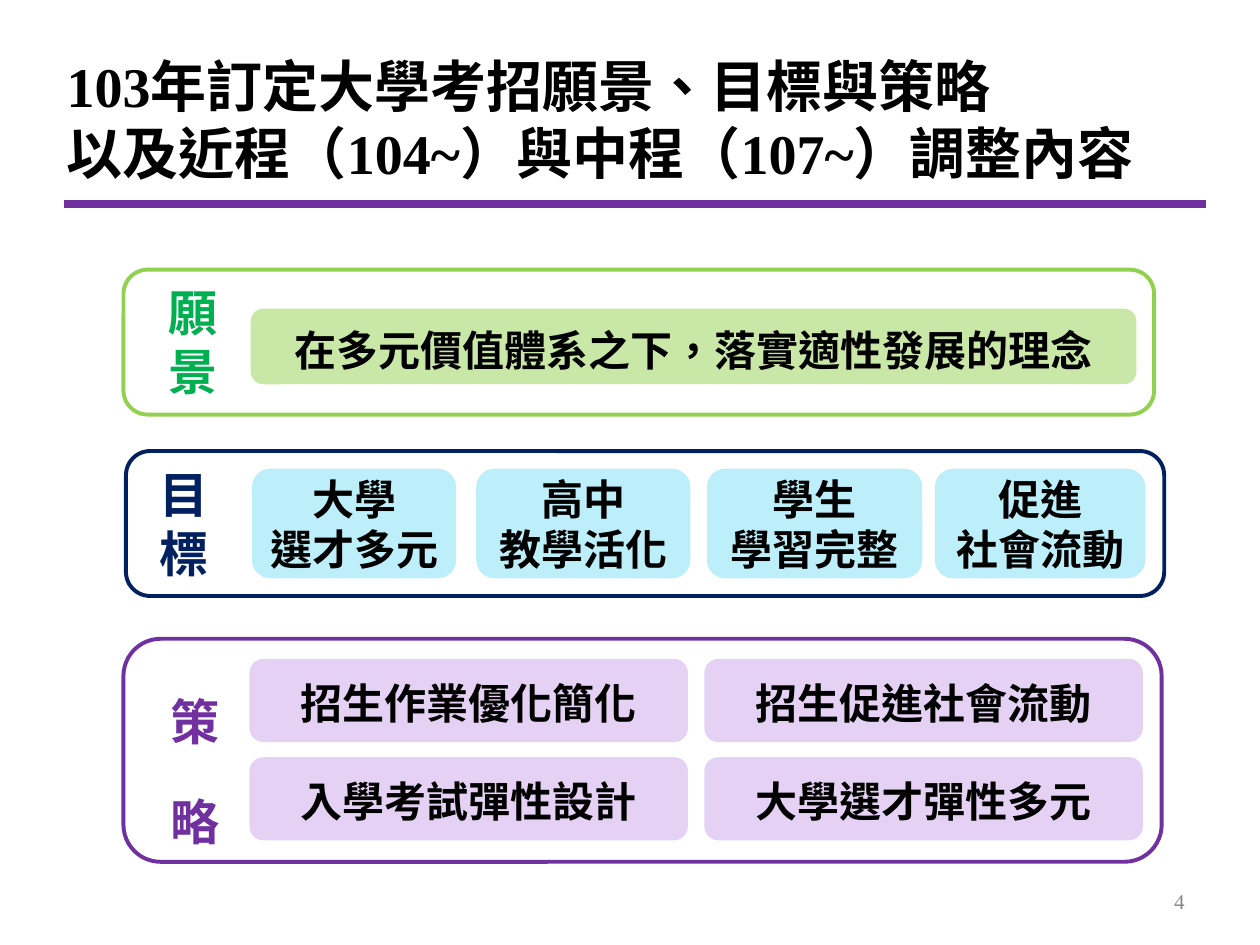
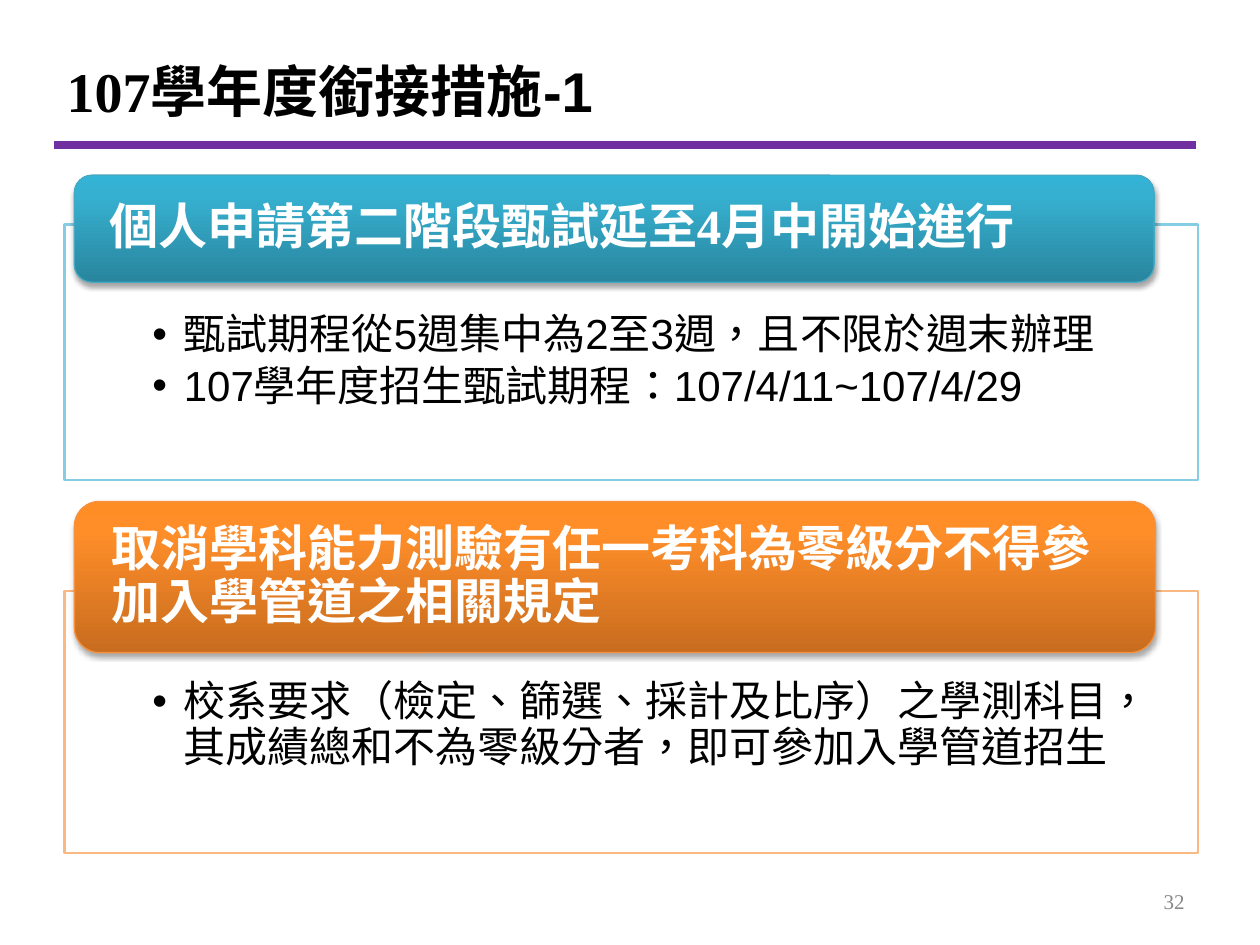
from itertools import product

from lxml.etree import SubElement
from pptx import Presentation
from pptx.dml.color import RGBColor
from pptx.enum.lang import MSO_LANGUAGE_ID
from pptx.enum.shapes import MSO_CONNECTOR, MSO_SHAPE
from pptx.enum.text import MSO_ANCHOR, PP_ALIGN
from pptx.oxml.ns import qn
from pptx.util import Inches, Pt

COLOURS = {
    "ink": "000000", "white": "FFFFFF", "purple": "7030A0", "grey": "888888",
    "vision line": "92D050", "vision label": "00B050", "vision tile": "C9E7A7",
    "goal": "002060", "goal tile": "BDEFFB", "strategy tile": "E4D1F3",
    "blue line": "86CCE2", "blue edge": "45A9C4",
    "orange line": "FAB882", "orange edge": "F5913F",
}
# Banner gradients run from the bottom edge upwards: (percent, colour)
GRADIENTS = {
    "blue": [(0, "29859E"), (80, "36B0D0"), (100, "33B3D5")],
    "orange": [(0, "C86C1F"), (80, "FF8E29"), (100, "FF8D25")],
}
SANS, SERIF = "Arial", "Times New Roman"
INSETS = (0.1, 0.05, 0.1, 0.05)


def colour(name):
    return RGBColor.from_string(COLOURS[name])


def add_bullet(para):
    properties = para._p.get_or_add_pPr()
    properties.set("marL", str(Inches(0.25)))
    properties.set("indent", str(-Inches(0.25)))
    SubElement(properties, qn("a:buFont"), typeface=SANS)
    SubElement(properties, qn("a:buChar"), char="•")


def write(box, paragraphs, size, ink="ink", font=SANS, bold=True,
          align=PP_ALIGN.LEFT, anchor=MSO_ANCHOR.MIDDLE, spacing=1.0,
          indent=0, bullets=False, insets=INSETS):
    """Each paragraph is a string or a list of (text, font) spans."""
    frame = box.text_frame
    frame.word_wrap = True
    frame.vertical_anchor = anchor
    for side, inset in zip(("left", "top", "right", "bottom"), insets):
        setattr(frame, f"margin_{side}", Inches(inset))
    for number, spans in enumerate(paragraphs):
        para = frame.add_paragraph() if number else frame.paragraphs[0]
        para.alignment = align
        para.line_spacing = spacing
        if number:
            para.space_before = Pt(3.6)
        if bullets:
            add_bullet(para)
        elif indent:
            para._p.get_or_add_pPr().set("marL", str(Inches(indent)))
        if isinstance(spans, str):
            spans = [(spans, font)]
        for text, face in spans:
            for row, line in enumerate(text.split("\n")):
                if row:
                    para.add_line_break()
                span = para.add_run()
                span.text = line
                look = {"name": face, "size": Pt(size), "bold": bold,
                        "language_id": MSO_LANGUAGE_ID.TRADITIONAL_CHINESE}
                for key, value in look.items():
                    setattr(span.font, key, value)
                span.font.color.rgb = colour(ink)


def add_box(page, kind, place, fill=None, line=None, weight=2.25):
    box = page.shapes.add_shape(kind, *map(Inches, place))
    box.shadow.inherit = False
    if fill:
        box.fill.solid()
        box.fill.fore_color.rgb = colour(fill)
    else:
        box.fill.background()
    if line:
        box.line.color.rgb = colour(line)
        box.line.width = Pt(weight)
    else:
        box.line.fill.background()
    return box


def add_text(page, place, paragraphs, size, **style):
    box = page.shapes.add_textbox(*map(Inches, place))
    write(box, paragraphs, size, **style)


def add_rule(page, left, top):
    rule = page.shapes.add_connector(
        MSO_CONNECTOR.STRAIGHT, Inches(left), Inches(top),
        Inches(left + 9.06), Inches(top))
    rule.line.color.rgb = colour("purple")
    rule.line.width = Pt(4.5)
    SubElement(rule._element.spPr, qn("a:effectLst"))


def add_page(deck, number, title, title_place, rule_at, anchor):
    page = deck.slides.add_slide(deck.slide_layouts[6])
    add_rule(page, *rule_at)
    add_text(page, title_place, [title], 32, font=SERIF, anchor=anchor)
    add_text(page, (7.17, 6.95, 2.33, 0.4), [number], 12, ink="grey",
             font=SERIF, bold=False, align=PP_ALIGN.RIGHT)
    return page


def add_frame(page, place, line, label, ink, **style):
    """Outlined band whose label stands at its left end."""
    frame = add_box(page, MSO_SHAPE.ROUNDED_RECTANGLE, place, line=line)
    write(frame, [label], 28, ink=ink, **style)


def add_tile(page, place, fill, text, **style):
    tile = add_box(page, MSO_SHAPE.ROUNDED_RECTANGLE, place, fill=fill)
    write(tile, [text], 24, align=PP_ALIGN.CENTER, **style)


def paint_gradient(box, stops):
    properties = box._element.spPr
    properties.remove(properties.find(qn("a:noFill")))
    gradient = properties.makeelement(qn("a:gradFill"), {"rotWithShape": "1"})
    properties.find(qn("a:prstGeom")).addnext(gradient)
    stop_list = SubElement(gradient, qn("a:gsLst"))
    for percent, value in stops:
        stop = SubElement(stop_list, qn("a:gs"), pos=str(percent * 1000))
        SubElement(stop, qn("a:srgbClr"), val=value)
    SubElement(gradient, qn("a:lin"), ang=str(270 * 60000), scaled="0")


def drop_shadow(box):
    effects = box._element.spPr.find(qn("a:effectLst"))
    shadow = SubElement(effects, qn("a:outerShdw"), blurRad=str(Pt(3.1)),
                        dist=str(Pt(1.8)), dir=str(90 * 60000), rotWithShape="0")
    shade = SubElement(shadow, qn("a:srgbClr"), val=COLOURS["ink"])
    SubElement(shade, qn("a:alpha"), val="35000")


def add_measure(page, hue, panel_top, panel_height, banner_place, heading, points):
    """Panel of bullet points with a shaded banner over its top edge."""
    panel = add_box(page, MSO_SHAPE.RECTANGLE, (0.51, panel_top, 9, panel_height),
                    fill="white", line=f"{hue} line", weight=1.5)
    write(panel, points, 24, bold=False, anchor=MSO_ANCHOR.TOP, spacing=0.9,
          bullets=True, insets=(0.7, 0.71, 0.7, 0.19))
    banner = add_box(page, MSO_SHAPE.ROUNDED_RECTANGLE, banner_place,
                     line=f"{hue} edge", weight=0.75)
    paint_gradient(banner, GRADIENTS[hue])
    drop_shadow(banner)
    write(banner, [heading], 28, ink="white", spacing=0.9,
          insets=(0.24, 0, 0.24, 0))


def build_vision_page(deck):
    page = add_page(
        deck, "4",
        "103年訂定大學考招願景、目標與策略\n以及近程（104~）與中程（107~）調整內容",
        (0.43, 0.36, 9.57, 1.18), (0.51, 1.62), MSO_ANCHOR.TOP)

    add_frame(page, (0.98, 2.14, 8.18, 1.15), "vision line", "願\n景",
              "vision label", anchor=MSO_ANCHOR.TOP, indent=0.2)
    add_tile(page, (1.99, 2.45, 7.03, 0.6), "vision tile",
             "在多元價值體系之下，落實適性發展的理念", font=SERIF, spacing=1.12)

    add_frame(page, (1, 3.58, 8.24, 1.15), "goal", "目\n標", "goal",
              anchor=MSO_ANCHOR.TOP, indent=0.11)
    goals = [(2, 1.62, "大學\n選才多元"), (3.78, 1.7, "高中\n教學活化"),
             (5.61, 1.71, "學生\n學習完整"), (7.42, 1.67, "促進\n社會流動")]
    for left, width, goal in goals:
        add_tile(page, (left, 3.72, width, 0.87), "goal tile", goal)

    add_frame(page, (0.98, 5.07, 8.24, 1.77), "purple", "策\n略", "purple",
              font=SERIF, spacing=1.7, indent=0.19)
    strategies = ["招生作業優化簡化", "招生促進社會流動",
                  "入學考試彈性設計", "大學選才彈性多元"]
    for (top, left), strategy in zip(product((5.23, 6.01), (1.98, 5.59)), strategies):
        add_tile(page, (left, top, 3.48, 0.66), "strategy tile", strategy,
                 spacing=1.08)


def build_measures_page(deck):
    page = add_page(deck, "32", [("107", SERIF), ("學年度銜接措施-1", SANS)],
                    (0.43, 0.29, 9, 0.85), (0.43, 1.15), MSO_ANCHOR.MIDDLE)
    add_measure(
        page, "blue", 1.78, 2.03, (0.59, 1.39, 8.57, 0.85),
        [("個人申請第二階段甄試延至", SANS), ("4", SERIF), ("月中開始進行", SANS)],
        ["甄試期程從5週集中為2至3週，且不限於週末辦理",
         "107學年度招生甄試期程：107/4/11~107/4/29"])
    add_measure(
        page, "orange", 4.69, 2.08, (0.59, 3.98, 8.58, 1.2),
        "取消學科能力測驗有任一考科為零級分不得參加入學管道之相關規定",
        ["校系要求（檢定、篩選、採計及比序）之學測科目，其成績總和不為零級分者，"
         "即可參加入學管道招生"])


def main():
    deck = Presentation()
    deck.slide_width, deck.slide_height = Inches(10), Inches(7.5)
    build_vision_page(deck)
    build_measures_page(deck)
    deck.save("out.pptx")


if __name__ == "__main__":
    main()
